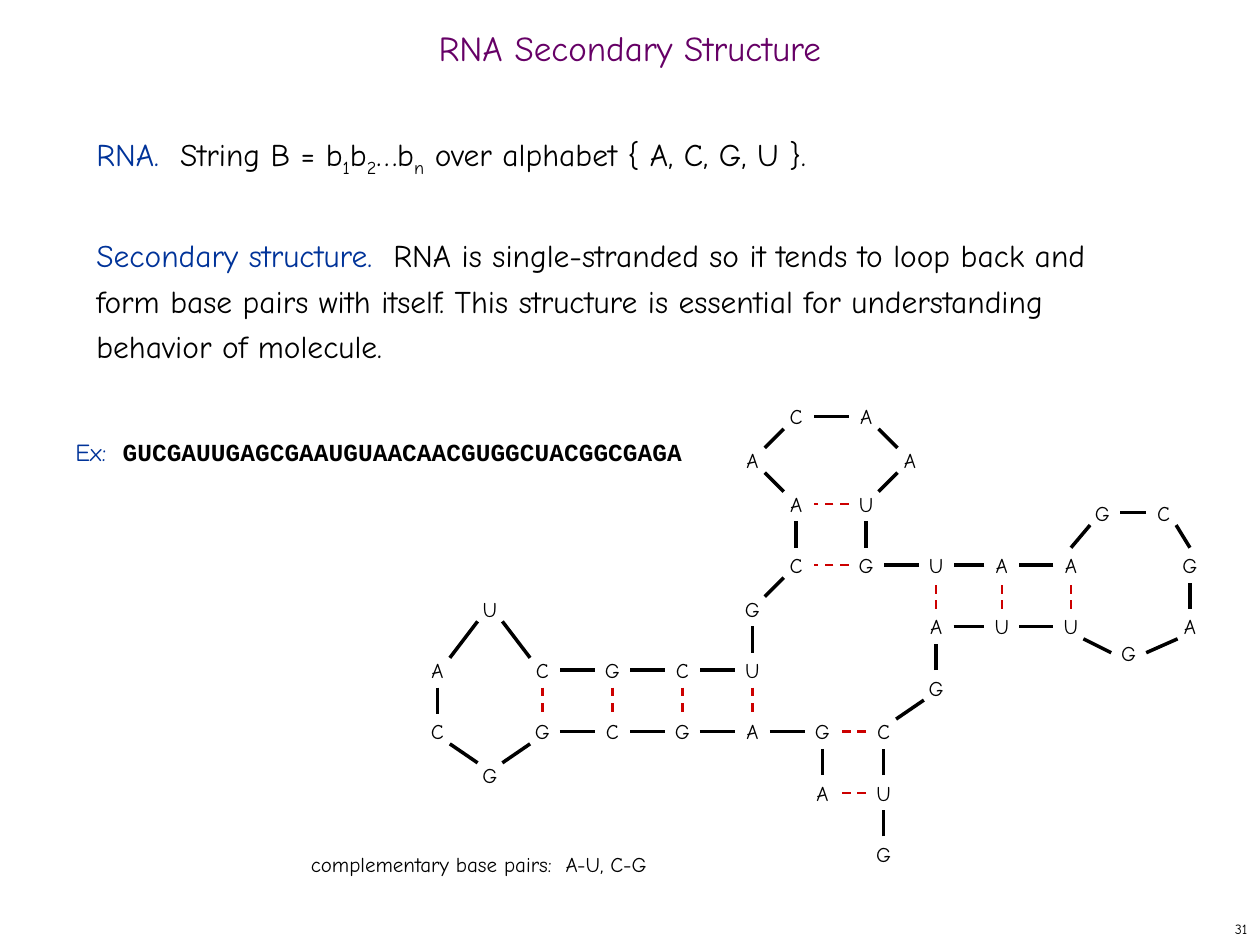
"""Build a slide on RNA secondary structure."""
import math
import pptx
import pptx.util
import pptx.dml.color
import pptx.enum.dml
import pptx.enum.shapes
import pptx.enum.text
import lxml.etree

Pt = pptx.util.Pt
Align = pptx.enum.text.PP_ALIGN
Anchor = pptx.enum.text.MSO_ANCHOR
BLACK, BLUE, RED, PURPLE = "000000", "003399", "CC0000", "660066"
FONT = "Comic Neue"


def tint(color, code):
    color.rgb = pptx.dml.color.RGBColor.from_string(code)


def write(par, text, size, code=BLACK, font=FONT):
    run = par.add_run()
    run.text = text
    run.font.size = Pt(size)
    run.font.name = font
    run.font.fill.solid()
    tint(run.font.fill.fore_color, code)
    return run


deck = pptx.Presentation()
deck.slide_width, deck.slide_height = Pt(720), Pt(540)
slide = deck.slides.add_slide(deck.slide_layouts[6])
shapes = slide.shapes

# name: left, top, width, height, wrap
places = {
    "page": (570, 522, 150, 18, False),
    "title": (0, 12, 720, 36, True),
    "body": (48, 72, 618, 426, True),
    "example": (36, 237, 364, 33, False),
    "key": (170.5, 483, 215, 24.5, False),
}
frames = {}
for name, (left, top, width, height, wrap) in places.items():
    box = shapes.add_textbox(Pt(left), Pt(top), Pt(width), Pt(height))
    frames[name] = box.text_frame
    frames[name].word_wrap = wrap

page = frames["page"].paragraphs[0]
frames["page"].vertical_anchor = Anchor.MIDDLE
page.alignment = Align.RIGHT
write(page, "31", 8)

title = frames["title"].paragraphs[0]
frames["title"].vertical_anchor = Anchor.MIDDLE
title.alignment = Align.CENTER
title.line_spacing = 0.7
write(title, "RNA Secondary Structure", 20, PURPLE)

string = frames["body"].paragraphs[0]
string.line_spacing = Pt(26)
write(string, "RNA.  ", 18, BLUE)
for text, sub in [("String B = b", ""), ("b", "1"), ("…b", "2"),
                  (" over alphabet { A, C, G, U }.", "n")]:
    if sub:
        low = write(string, sub, 18)
        low.font._element.set("baseline", "-25000")
    write(string, text, 18)

fold = frames["body"].add_paragraph()
fold.line_spacing = Pt(26)
fold.space_before = Pt(29)
write(fold, "Secondary structure.  ", 18, BLUE)
write(fold, "RNA is single-stranded so it tends to loop back and form base pairs "
      "with itself. This structure is essential for understanding behavior of "
      "molecule.", 18)

sample = frames["example"].paragraphs[0]
sample.line_spacing = Pt(26)
write(sample, "Ex:  ", 14, BLUE)
strand = write(sample, "GUCGAUUGAGCGAAUGUAACAACGUGGCUACGGCGAGA", 14, BLACK, "Courier New")
strand.font.bold = True

write(frames["key"].paragraphs[0], "complementary base pairs:  A-U, C-G", 12)

chain = [
    ("G", 505, 488), ("U", 505, 453), ("C", 505, 418), ("G", 535, 393),
    ("A", 535, 358), ("U", 572.5, 358), ("U", 612, 358), ("G", 645, 373),
    ("A", 680, 358), ("G", 680, 323), ("C", 665, 293), ("G", 630, 293),
    ("A", 612, 323), ("A", 572.5, 323), ("U", 535, 323), ("G", 495, 323),
    ("U", 495, 288), ("A", 520, 263), ("A", 495, 238), ("C", 455, 238),
    ("A", 430, 263), ("A", 455, 288), ("C", 455, 323), ("G", 430, 348),
    ("U", 430, 383), ("C", 390, 383), ("G", 350, 383), ("C", 310, 383),
    ("U", 280, 348), ("A", 250, 383), ("C", 250, 418), ("G", 280, 443),
    ("G", 310, 418), ("C", 350, 418), ("G", 390, 418), ("A", 430, 418),
    ("G", 470, 418), ("A", 470, 453),
]
pairs = [(1, 37), (2, 36), (4, 14), (5, 13), (6, 12), (15, 22),
         (16, 21), (24, 35), (25, 34), (26, 33), (27, 32)]
square = {7, 9, 12}
radius = 10

for base, x, y in chain:
    dot = shapes.add_shape(pptx.enum.shapes.MSO_SHAPE.OVAL, Pt(x - radius),
                           Pt(y - radius), Pt(2 * radius), Pt(2 * radius))
    dot.shadow.inherit = False
    dot.fill.background()
    dot.line.fill.background()
    dot.text_frame.word_wrap = False
    dot.text_frame.vertical_anchor = Anchor.MIDDLE
    par = dot.text_frame.paragraphs[0]
    par.alignment = Align.CENTER
    write(par, base, 12)

bonds = [(i, i + 1, BLACK, 2) for i in range(len(chain) - 1)]
bonds += [(i, j, RED, 1.25) for i, j in pairs]
for first, last, code, width in bonds:
    ends = []
    for here, there in [(first, last), (last, first)]:
        x, y = chain[here][1:]
        step = math.radians(90 if here in square else 45)
        turn = math.atan2(chain[there][2] - y, chain[there][1] - x)
        turn = round(turn / step) * step
        ends += [Pt(x + radius * math.cos(turn)), Pt(y + radius * math.sin(turn))]
    bond = shapes.add_connector(pptx.enum.shapes.MSO_CONNECTOR.STRAIGHT, *ends)
    bond.line.width = Pt(width)
    bond.line.fill.solid()
    tint(bond.line.fill.fore_color, code)
    if code == RED:
        bond.line.dash_style = pptx.enum.dml.MSO_LINE.DASH
    lxml.etree.SubElement(bond._element.spPr, pptx.oxml.ns.qn("a:effectLst"))

deck.save("out.pptx")
